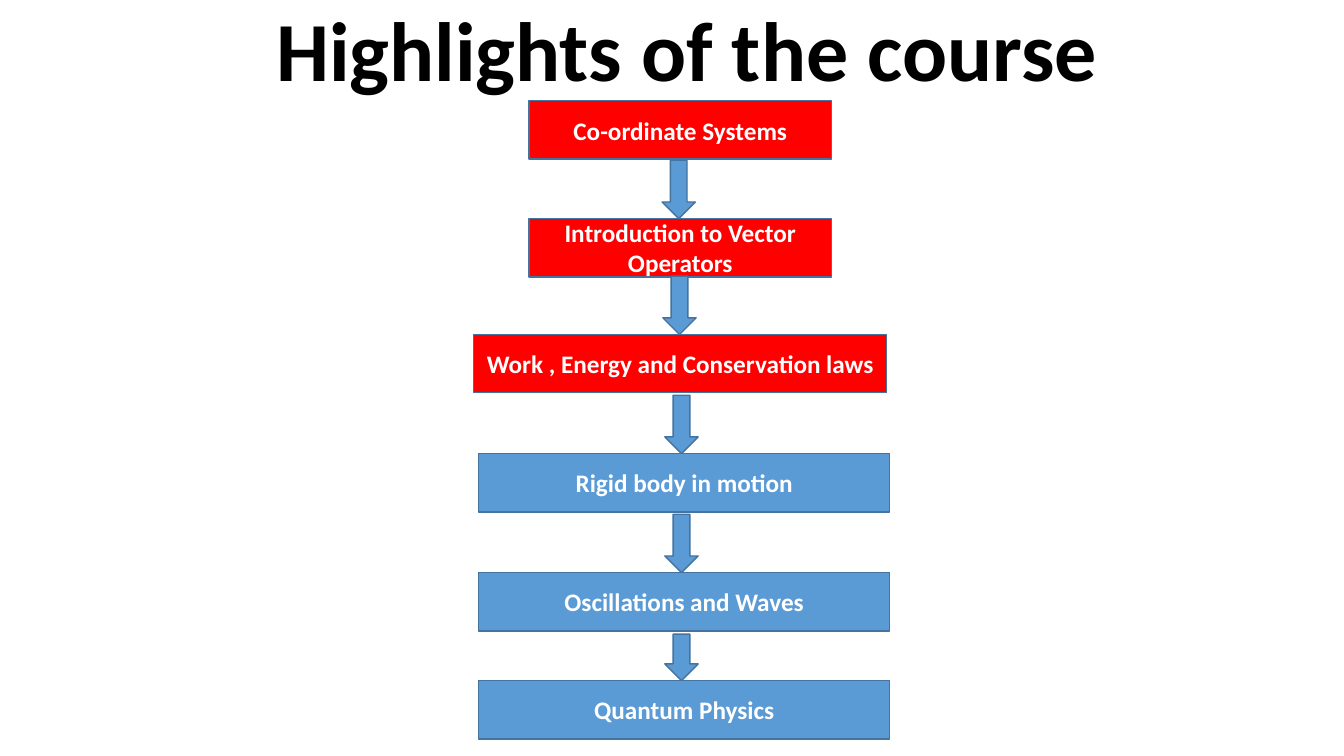
from pptx import Presentation
from pptx.dml.color import RGBColor
from pptx.enum.shapes import MSO_SHAPE
from pptx.enum.text import MSO_ANCHOR, PP_ALIGN
from pptx.util import Cm, Pt

COLORS = {
    "title": "000000",
    "label": "FFFFFF",
    "covered": "FF0000",
    "upcoming": "5B9BD5",
    "outline": "43739E",
}
FONT = "Calibri"
STAGE_HEIGHT = 1.47
ARROW_WIDTH = 0.84

# Label, fill, top and width of each stage, shift of its centre,
# then the height and centre shift of the arrow leading into it
STAGES = [
    ("Co-ordinate Systems", "covered", 0, 7.62, 0, None, None),
    ("Introduction to Vector Operators", "covered", 2.97, 7.62, 0, 1.47, -0.04),
    ("Work , Energy and Conservation laws", "covered", 5.89, 10.41, 0, 1.47, -0.02),
    ("Rigid body in motion", "upcoming", 8.89, 10.36, 0.1, 1.47, 0.03),
    ("Oscillations and Waves", "upcoming", 11.89, 10.36, 0.1, 1.47, 0.03),
    ("Quantum Physics", "upcoming", 14.61, 10.36, 0.1, 1.17, 0.03),
]


def color(name):
    return RGBColor.from_string(COLORS[name])


def write_text(shape, text, *, size, color_name, align, line_spacing=None):
    frame = shape.text_frame
    frame.word_wrap = True
    frame.vertical_anchor = MSO_ANCHOR.MIDDLE
    para = frame.paragraphs[0]
    para.alignment = align
    if line_spacing:
        para.line_spacing = line_spacing
    span = para.add_run()
    span.text = text
    span.font.name = FONT
    span.font.size = Pt(size)
    span.font.bold = True
    span.font.color.rgb = color(color_name)


def add_block(page, kind, center, top, width, height, fill):
    block = page.shapes.add_shape(
        kind, Cm(center - width / 2), Cm(top), Cm(width), Cm(height))
    block.shadow.inherit = False
    block.fill.solid()
    block.fill.fore_color.rgb = color(fill)
    block.line.color.rgb = color("outline")
    block.line.width = Pt(1)
    return block


def add_title(page, left, top, width, height):
    box = page.shapes.add_textbox(Cm(left), Cm(top), Cm(width), Cm(height))
    write_text(box, "Highlights of the course", size=60, color_name="title",
               align=PP_ALIGN.LEFT, line_spacing=0.9)


def add_course_flow(page, left, top, width):
    middle = left + width / 2
    for label, fill, offset, stage_width, shift, arrow_height, arrow_shift in STAGES:
        stage_top = top + offset
        # Arrow ending at the top of this stage
        if arrow_height:
            add_block(page, MSO_SHAPE.DOWN_ARROW, middle + arrow_shift,
                      stage_top - arrow_height, ARROW_WIDTH, arrow_height, "upcoming")
        # Stage box
        stage = add_block(page, MSO_SHAPE.RECTANGLE, middle + shift,
                          stage_top, stage_width, STAGE_HEIGHT, fill)
        write_text(stage, label, size=18, color_name="label", align=PP_ALIGN.CENTER)


def main():
    deck = Presentation()
    deck.slide_width = Cm(33.87)
    deck.slide_height = Cm(19.05)
    page = deck.slides.add_slide(deck.slide_layouts[6])
    add_title(page, 6.71, 0.1, 22.86, 2.54)
    add_course_flow(page, 11.94, 2.54, 10.41)
    deck.save("out.pptx")


if __name__ == "__main__":
    main()
